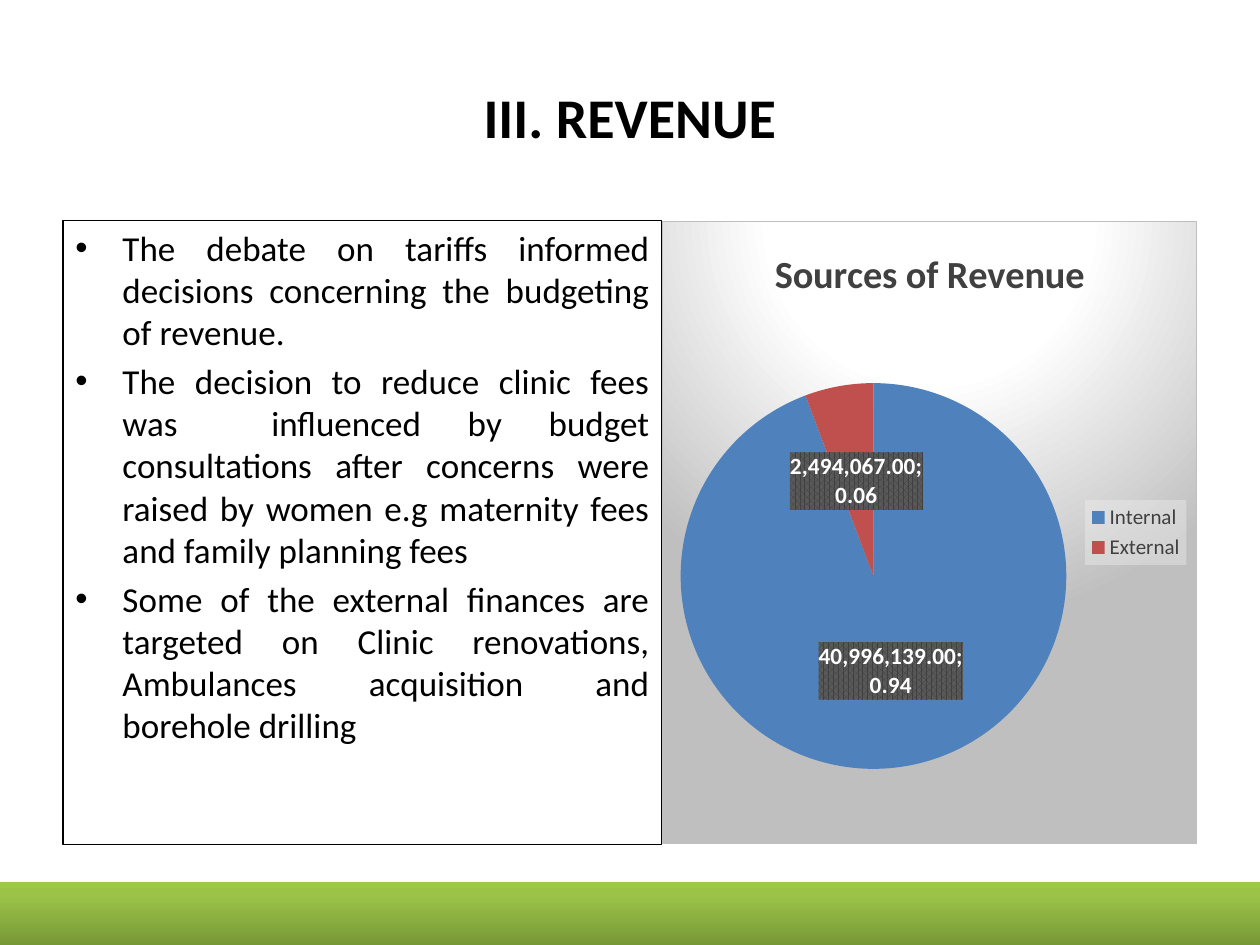
from dataclasses import dataclass

from lxml.etree import fromstring
from pptx import Presentation
from pptx.chart.data import CategoryChartData
from pptx.dml.color import RGBColor
from pptx.enum.chart import XL_CHART_TYPE, XL_LABEL_POSITION, XL_LEGEND_POSITION
from pptx.enum.shapes import MSO_SHAPE
from pptx.enum.text import MSO_ANCHOR, PP_ALIGN
from pptx.util import Cm, Pt

FONT = "Calibri"
BLACK = RGBColor(0x00, 0x00, 0x00)
WHITE = RGBColor(0xFF, 0xFF, 0xFF)
DARK_GREY = RGBColor(0x40, 0x40, 0x40)
MID_GREY = RGBColor(0x59, 0x59, 0x59)
SILVER = RGBColor(0xBF, 0xBF, 0xBF)
PALE_GREY = RGBColor(0xF2, 0xF2, 0xF2)
BLUE = RGBColor(0x4F, 0x81, 0xBD)
RED = RGBColor(0xC0, 0x50, 0x4D)
GREEN_STOPS = (
    (0, RGBColor(0x77, 0x97, 0x37)),
    (80, RGBColor(0x9B, 0xC3, 0x48)),
    (100, RGBColor(0x9D, 0xC7, 0x46)),
)
GREY_STOPS = ((0, WHITE), (39, WHITE), (100, SILVER))
NAMESPACES = (
    'xmlns:a="http://schemas.openxmlformats.org/drawingml/2006/main" '
    'xmlns:c="http://schemas.openxmlformats.org/drawingml/2006/chart"'
)


@dataclass(frozen=True)
class Area:
    left: float
    top: float
    width: float
    height: float

    def lengths(self):
        return Cm(self.left), Cm(self.top), Cm(self.width), Cm(self.height)


@dataclass(frozen=True)
class Source:
    name: str
    amount: int
    color: RGBColor


TITLE_AREA = Area(1.27, 0.76, 22.86, 3.18)
BODY_AREA = Area(1.27, 4.45, 12.07, 12.57)
CHART_AREA = Area(13.34, 4.45, 10.8, 12.57)
BAND_AREA = Area(0, 17.78, 25.93, 1.3)

POINTS = (
    "The debate on tariffs informed decisions concerning the budgeting of revenue.",
    "The decision to reduce clinic fees was  influenced by budget consultations after "
    "concerns were raised by women e.g maternity fees and family planning fees",
    "Some of the external finances are targeted on Clinic renovations, Ambulances "
    "acquisition and borehole drilling",
)
SOURCES = (Source("Internal", 40996139, BLUE), Source("External", 2494067, RED))


def element(tag: str, content: str):
    """Build an XML element whose children are given as text."""
    return fromstring(f"<{tag} {NAMESPACES}>{content}</{tag}>")


def solid(color: RGBColor) -> str:
    return f'<a:solidFill><a:srgbClr val="{color}"/></a:solidFill>'


def gradient(stops, direction: str) -> str:
    marks = "".join(
        f'<a:gs pos="{place * 1000}"><a:srgbClr val="{color}"/></a:gs>'
        for place, color in stops
    )
    return f'<a:gradFill rotWithShape="1"><a:gsLst>{marks}</a:gsLst>{direction}</a:gradFill>'


def style_font(font, size: float, color: RGBColor, bold: bool = False) -> None:
    font.name = FONT
    font.size = Pt(size)
    font.bold = bold
    font.color.rgb = color


def add_run(para, text: str, size: float, color: RGBColor, bold: bool = False) -> None:
    span = para.add_run()
    span.text = text
    style_font(span.font, size, color, bold)


def add_title(page) -> None:
    frame = page.shapes.add_textbox(*TITLE_AREA.lengths()).text_frame
    frame.word_wrap = True
    frame.vertical_anchor = MSO_ANCHOR.MIDDLE
    para = frame.paragraphs[0]
    para.alignment = PP_ALIGN.CENTER
    add_run(para, "III. REVENUE", 32, BLACK, bold=True)


def add_points(page) -> None:
    box = page.shapes.add_textbox(*BODY_AREA.lengths())
    box.line.color.rgb = BLACK
    box.line.width = Pt(0.75)
    frame = box.text_frame
    frame.word_wrap = True
    for index, text in enumerate(POINTS):
        para = frame.add_paragraph() if index else frame.paragraphs[0]
        para.alignment = PP_ALIGN.JUSTIFY
        para.space_before = Pt(4)
        properties = para._p.get_or_add_pPr()
        properties.set("marL", str(Cm(0.95)))
        properties.set("indent", str(-Cm(0.95)))
        properties.append(fromstring(f'<a:buFont {NAMESPACES} typeface="Arial"/>'))
        properties.append(fromstring(f'<a:buChar {NAMESPACES} char="•"/>'))
        add_run(para, text, 20, BLACK)


def add_band(page) -> None:
    band = page.shapes.add_shape(MSO_SHAPE.RECTANGLE, *BAND_AREA.lengths())
    band.line.fill.background()
    upward = gradient(GREEN_STOPS, '<a:lin ang="16200000" scaled="0"/>')
    shadow = (
        f'<a:outerShdw blurRad="{Pt(3.1)}" dist="{Pt(1.8)}" dir="5400000" rotWithShape="0">'
        f'<a:srgbClr val="{BLACK}"><a:alpha val="35000"/></a:srgbClr></a:outerShdw>'
    )
    properties = band._element.spPr
    properties.find("{*}ln").addprevious(element("a:wrap", upward)[0])
    properties.append(element("a:effectLst", shadow))


def add_chart_fill(owner, content: str) -> None:
    """Put shape properties just before the text properties of a chart part."""
    owner.find("{*}txPr").addprevious(element("c:spPr", content))


def place_plot(chart, left: float, top: float, width: float, height: float) -> None:
    """Fix the inner plot area, in shares of the chart's size."""
    plot_area = chart._chartSpace.chart.plotArea
    for layout in plot_area.findall("{*}layout"):
        plot_area.remove(layout)
    settings = {
        "layoutTarget": "inner", "xMode": "edge", "yMode": "edge",
        "x": left, "y": top, "w": width, "h": height,
    }
    content = "".join(f'<c:{name} val="{value}"/>' for name, value in settings.items())
    plot_area.insert(0, element("c:layout", f"<c:manualLayout>{content}</c:manualLayout>"))


def style_labels(plot) -> None:
    plot.has_data_labels = True
    labels = plot.data_labels
    labels.show_value = True
    labels.show_percentage = True
    labels.number_format = "#,##0.00"
    labels.number_format_is_linked = False
    labels.position = XL_LABEL_POSITION.CENTER
    style_font(labels.font, 13.3, WHITE, bold=True)
    add_chart_fill(
        labels._element,
        f'<a:pattFill prst="pct75"><a:fgClr><a:srgbClr val="{DARK_GREY}"/></a:fgClr>'
        f'<a:bgClr><a:srgbClr val="{MID_GREY}"/></a:bgClr></a:pattFill>',
    )
    separator = element("c:separator", "; ")
    labels._element.find("{*}showPercent").getparent().find("{*}showBubbleSize")
    last_flag = [child for child in labels._element if "}show" in child.tag
                 and not child.tag.endswith("showLeaderLines")][-1]
    last_flag.addnext(separator)


def add_revenue_chart(page) -> None:
    data = CategoryChartData(number_format="#,##0.00")
    data.categories = [source.name for source in SOURCES]
    data.add_series("Sources of Revenue", [source.amount for source in SOURCES])
    chart = page.shapes.add_chart(XL_CHART_TYPE.PIE, *CHART_AREA.lengths(), data).chart
    style_font(chart.font, 10, BLACK)
    circle = ('<a:path path="circle"><a:fillToRect l="50000" t="-80000" '
              'r="50000" b="180000"/></a:path>')
    add_chart_fill(
        chart._chartSpace,
        gradient(GREY_STOPS, circle) + f'<a:ln w="{Pt(0.75)}">{solid(SILVER)}</a:ln>',
    )
    chart.has_title = True
    add_run(chart.chart_title.text_frame.paragraphs[0], "Sources of Revenue", 22, DARK_GREY, bold=True)
    chart.has_legend = True
    legend = chart.legend
    legend.position = XL_LEGEND_POSITION.RIGHT
    legend.include_in_layout = False
    style_font(legend.font, 12, DARK_GREY)
    add_chart_fill(
        legend._element,
        f'<a:solidFill><a:srgbClr val="{PALE_GREY}"><a:alpha val="39000"/></a:srgbClr></a:solidFill>',
    )
    plot = chart.plots[0]
    plot.vary_by_categories = True
    for index, source in enumerate(SOURCES):
        fill = plot.series[0].points[index].format.fill
        fill.solid()
        fill.fore_color.rgb = source.color
    style_labels(plot)
    place_plot(chart, 0.03, 0.26, 0.73, 0.62)


def main() -> None:
    deck = Presentation()
    deck.slide_width, deck.slide_height = Cm(25.4), Cm(19.05)
    page = deck.slides.add_slide(deck.slide_layouts[6])
    add_title(page)
    add_points(page)
    add_band(page)
    add_revenue_chart(page)
    deck.save("out.pptx")


if __name__ == "__main__":
    main()
